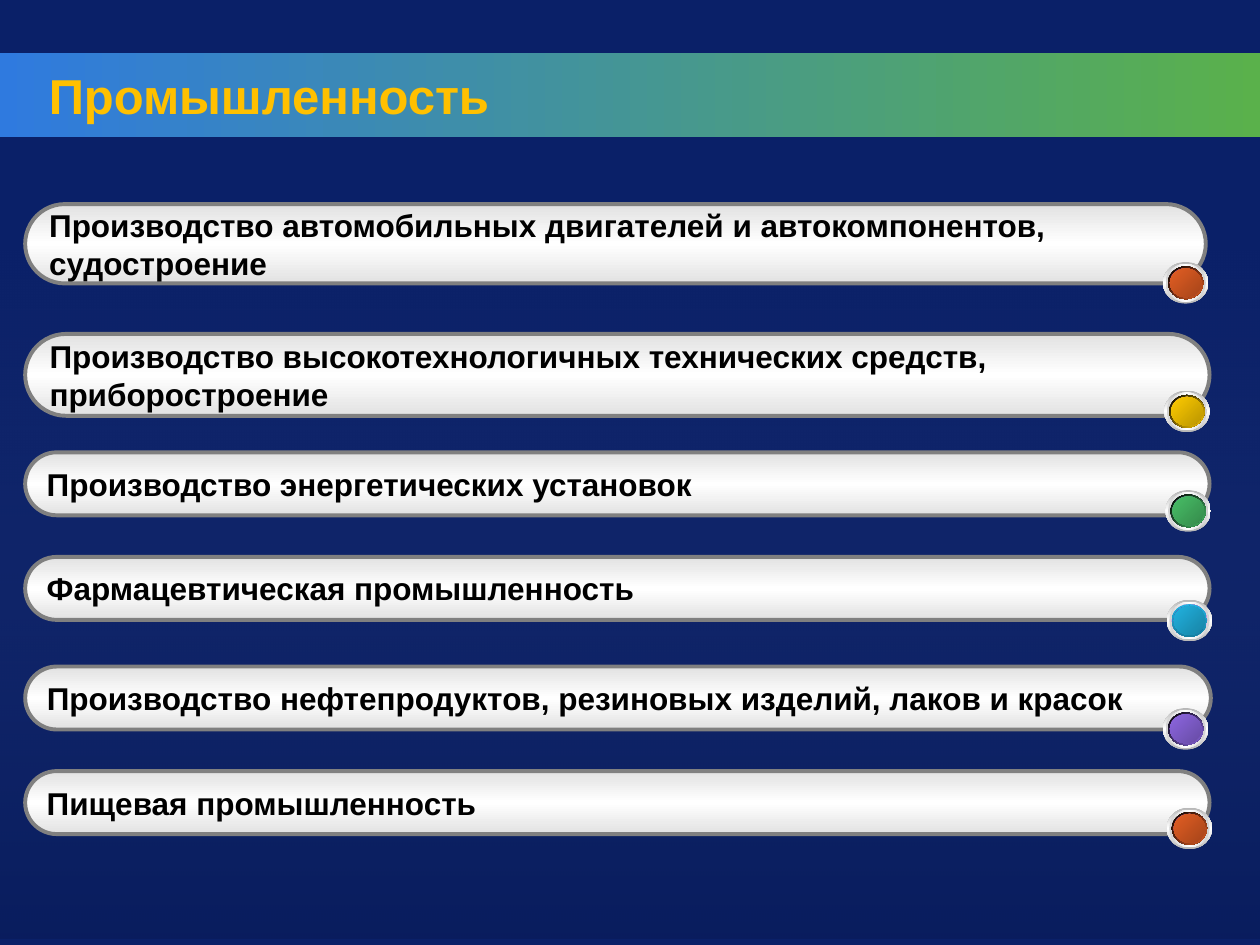
import pptx
import pptx.util
import pptx.dml.color
import pptx.enum.shapes
import pptx.enum.text
import pptx.oxml
import pptx.oxml.ns

KIND = pptx.enum.shapes.MSO_SHAPE
CELL = pptx.util.Inches(0.1)  # the slide is 100 columns by 75 rows
COLS, ROWS = 100, 75

INK = {
    "back": "0A2068", "title": "FFC000", "text": "000000", "edge": "808080",
    "blue": "2F7ADF", "leaf": "5AB14B", "black": "000000", "white": "FFFFFF",
    "bar": "E2E2E2", "rim": "B6B6B6", "ring": "D1D1D1",
    "plum": "8A52C8", "grape": "6A3F99",
    "red": "E35E23", "rust": "A6451A", "gold": "FFCC00", "ochre": "BA9500",
    "green": "48BE67", "moss": "358B4B", "cyan": "21B3E1", "teal": "1883A4",
    "deep": "1880A1", "lilac": "8D67E1", "violet": "674BA4",
}


def tint(name):
    return pptx.dml.color.RGBColor.from_string(INK[name])


def blend(shapes, kind, box, names, angle, alphas=None):
    """Add a borderless shape with evenly spaced gradient stops, angle clockwise."""
    shape = shapes.add_shape(kind, *[round(n * CELL) for n in box])
    shape.shadow.inherit = False
    shape.line.fill.background()
    shape.fill.gradient()
    shape.fill.gradient_angle = -angle % 360
    stops = shape.fill._fill._gradFill.find(pptx.oxml.ns.qn("a:gsLst"))
    for old in list(stops):
        stops.remove(old)
    for i, name in enumerate(names):
        spot = 100000 * i // (len(names) - 1)
        alpha = f'<a:alpha val="{alphas[i] * 1000}"/>' if alphas else ""
        stops.append(pptx.oxml.parse_xml(
            f'<a:gs {pptx.oxml.ns.nsdecls("a")} pos="{spot}">'
            f'<a:srgbClr val="{INK[name]}">{alpha}</a:srgbClr></a:gs>'))
    return shape


deck = pptx.Presentation()
deck.slide_width, deck.slide_height = COLS * CELL, ROWS * CELL
slide = deck.slides.add_slide(deck.slide_layouts[6])
slide.background.fill.solid()
slide.background.fill.fore_color.rgb = tint("back")

# Title band and the shade below it
blend(slide.shapes, KIND.RECTANGLE, (0, 4.2, COLS, 6.7), ("blue", "leaf"), 0)
blend(slide.shapes, KIND.RECTANGLE, (0, 16.5, COLS, 58), ("black", "white"), 270, (10, 0))

title = slide.shapes.add_textbox(*[round(n * CELL) for n in (1.2, 4.4, 38.6, 6.2)])
frame = title.text_frame
frame.word_wrap = True
frame.vertical_anchor = pptx.enum.text.MSO_ANCHOR.MIDDLE
para = frame.paragraphs[0]
para.text = "Промышленность"
para.alignment = pptx.enum.text.PP_ALIGN.RIGHT
para.font.name, para.font.size, para.font.bold = "Arial", pptx.util.Pt(28), True
para.font.color.rgb = tint("title")

# Bars: top, width, height, button left and top, light, dark, lines of text
bars = [
    (16.2, 93.7, 6.3, 92.3, 20.8, "red", "rust",
     "Производство автомобильных двигателей и автокомпонентов,\nсудостроение"),
    (26.5, 94, 6.5, 92.4, 31, "gold", "ochre",
     "Производство высокотехнологичных технических средств,\nприборостроение"),
    (35.9, 94, 5, 92.5, 38.9, "green", "moss", "Производство энергетических установок"),
    (44.2, 94, 5, 92.6, 47.6, "cyan", "teal", "Фармацевтическая промышленность"),
    (52.9, 94.1, 5, 92.3, 56.2, "lilac", "violet",
     "Производство нефтепродуктов, резиновых изделий, лаков и красок"),
    (61.2, 94, 5, 92.6, 64.1, "red", "rust", "Пищевая промышленность"),
]
WIDE, HIGH = 3.6, 3.3  # outer size of a button

for top, width, height, left, drop, light, dark, words in bars:
    group = slide.shapes.add_group_shape().shapes
    bar = blend(group, KIND.ROUNDED_RECTANGLE, (2, top, width, height),
                ("bar", "white", "bar"), 90)
    bar.adjustments[0] = 0.5
    bar.line.color.rgb = tint("edge")
    bar.line.width = pptx.util.Pt(2.25)
    frame = bar.text_frame
    frame.word_wrap = False
    frame.vertical_anchor = pptx.enum.text.MSO_ANCHOR.MIDDLE
    frame.text = words
    for para in frame.paragraphs:
        para.alignment = pptx.enum.text.PP_ALIGN.LEFT
        para.font.name, para.font.size, para.font.bold = "Arial", pptx.util.Pt(18), True
        para.font.color.rgb = tint("text")

    bevel = (("cyan", "deep"), 90) if light == "cyan" else (("black", light), 45)
    layers = [
        (WIDE, HIGH, ("rim", "white", "rim"), 90),
        (3.2, 3, ("ring", "white", "ring"), 0),
        (2.8, 2.6, ("white", "plum", "white"), 45),
        (2.8, 2.6, *bevel),
        (2.5, 2.3, ("grape", "plum", "grape"), 315),
        (2.5, 2.3, (light, dark), 45),
    ]
    for wide, high, names, angle in layers:
        box = (left + (WIDE - wide) / 2, drop + (HIGH - high) / 2, wide, high)
        blend(group, KIND.OVAL, box, names, angle)

deck.save("out.pptx")
